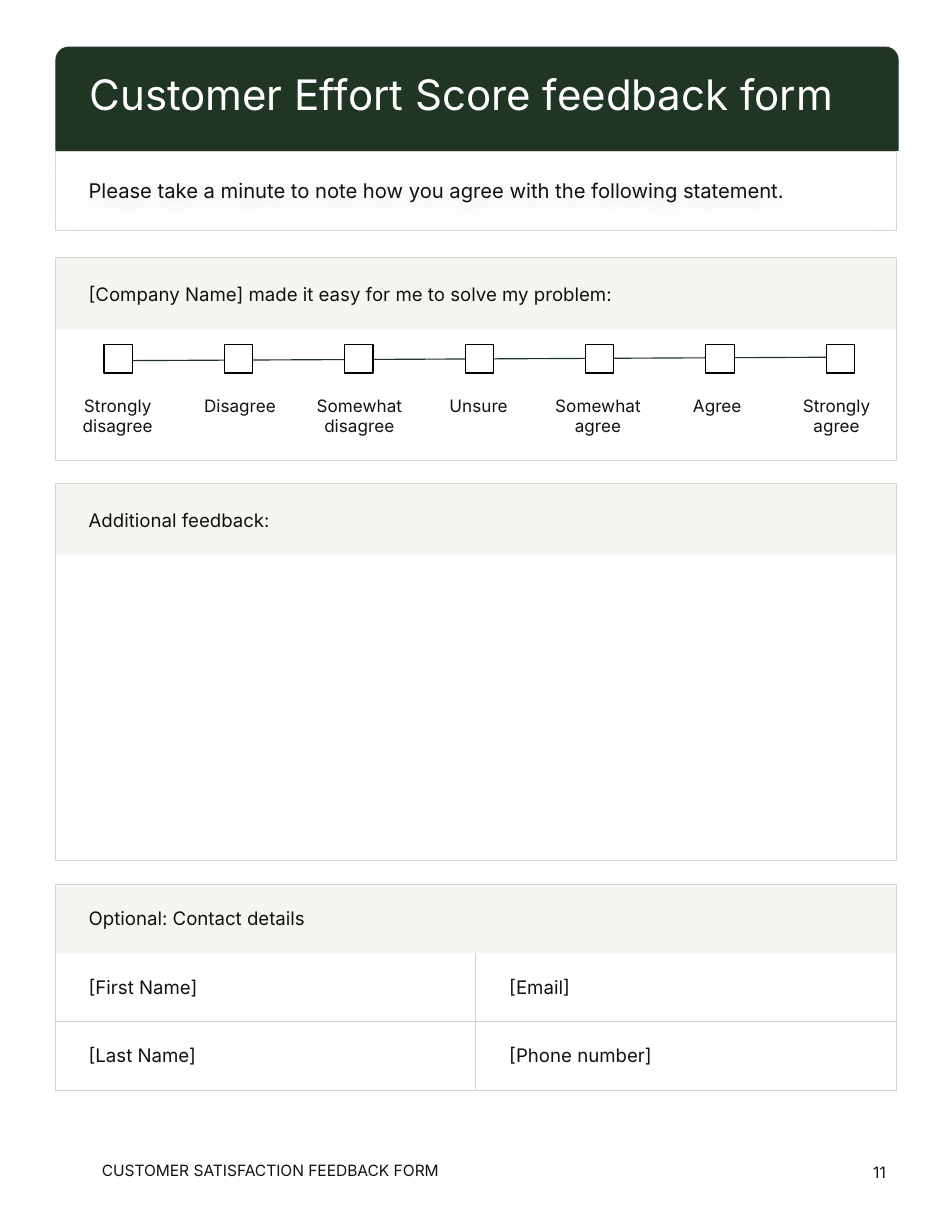
from lxml import etree
from pptx import Presentation
from pptx.dml.color import RGBColor
from pptx.enum import shapes, text
from pptx.oxml import ns
from pptx.util import Cm, Pt

TITLE = "Customer Effort Score feedback form"
INTRO = "Please take a minute to note how you agree with the following statement."
SCALE = ["Strongly disagree", "Disagree", "Somewhat disagree", "Unsure",
         "Somewhat agree", "Agree", "Strongly agree"]
CONTACTS = [["[First Name]", "[Email]"], ["[Last Name]", "[Phone number]"]]
FOOTER, PAGE = "CUSTOMER SATISFACTION FEEDBACK FORM", "11"

INK, GREEN, PALE, RULE, WHITE = "11110D", "203524", "F5F5F2", "D5D5D2", "FFFFFF"
FONT = "Inter"
LEFT, WIDTH = 1.25, 19.08
HEAD_INSETS = (0.76, 0.51, 0.51, 0.51)  # left, top, right, bottom
FIELD_INSETS = (0.76, 0.25, 0.51, 0.25)
SCALE_INSETS = (0.25, 1.52, 0.25, 0.51)
BOX, BOX_LEFT, BOX_TOP, BOX_STEP = 0.64, 2.36, 7.82, 2.73

# heading, top, row heights, column widths, body rows, insets, size, align, grid
SECTIONS = [
    ("[Company Name] made it easy for me to solve my problem:", 5.84, [1.6, 3],
     [2.84] + [(WIDTH - 2.84) / 6] * 6, [SCALE], SCALE_INSETS, 11,
     text.PP_ALIGN.CENTER, False),
    ("Additional feedback:", 10.97, [1.6, 6.93], [WIDTH], [[""]],
     FIELD_INSETS, 12, text.PP_ALIGN.LEFT, False),
    ("Optional: Contact details", 20.07, [1.55] * 3, [WIDTH / 2] * 2, CONTACTS,
     FIELD_INSETS, 12, text.PP_ALIGN.LEFT, True),
]


def color(value):
    return RGBColor.from_string(value)


def write(frame, words, size, ink=INK, align=text.PP_ALIGN.LEFT, spacing=None):
    frame.text = words
    paragraph = frame.paragraphs[0]
    paragraph.alignment = align
    if spacing:
        paragraph.line_spacing = spacing
    font = paragraph.font if not paragraph.runs else paragraph.runs[0].font
    font.name, font.size, font.bold = FONT, Pt(size), False
    font.color.rgb = color(ink)


def set_insets(holder, insets):
    (holder.margin_left, holder.margin_top,
     holder.margin_right, holder.margin_bottom) = map(Cm, insets)


def add_panel(slide, kind, place, line, fill=None):
    panel = slide.shapes.add_shape(kind, *map(Cm, place))
    panel.shadow.inherit = False
    panel.line.color.rgb = color(line)
    panel.line.width = Pt(0.75)
    if fill:
        panel.fill.solid()
        panel.fill.fore_color.rgb = color(fill)
    else:
        panel.fill.background()
    return panel


def add_label(slide, words, place, size, align, anchor):
    frame = slide.shapes.add_textbox(*map(Cm, place)).text_frame
    frame.word_wrap = True
    frame.vertical_anchor = anchor
    set_insets(frame, [0.25] * 4)
    write(frame, words, size, align=align)


def set_borders(cell, sides):
    """Rule the named sides (letters of LRTB) and clear the others."""
    properties = cell._tc.get_or_add_tcPr()
    for side in "LRTB":
        border = etree.SubElement(properties, ns.qn(f"a:ln{side}"), w=str(Pt(0.75)))
        if side in sides:
            fill = etree.SubElement(border, ns.qn("a:solidFill"))
            etree.SubElement(fill, ns.qn("a:srgbClr"), val=RULE)
        else:
            etree.SubElement(border, ns.qn("a:noFill"))


def add_section(slide, heading, top, heights, widths, body, insets, size, align, grid):
    rows, columns = len(heights), len(widths)
    table = slide.shapes.add_table(rows, columns, Cm(LEFT), Cm(top),
                                   Cm(WIDTH), Cm(sum(heights))).table
    table.first_row = table.horz_banding = False
    for row, height in zip(table.rows, heights):
        row.height = Cm(height)
    for column, width in zip(table.columns, widths):
        column.width = Cm(width)

    head = table.cell(0, 0)
    if columns > 1:
        head.merge(table.cell(0, columns - 1))
    set_borders(head, "LTR")
    head.fill.solid()
    head.fill.fore_color.rgb = color(PALE)
    head.vertical_anchor = text.MSO_ANCHOR.MIDDLE
    set_insets(head, HEAD_INSETS)
    write(head.text_frame, heading, 12, spacing=None if grid else 1.15)

    for r, answers in enumerate(body, 1):
        for c, words in enumerate(answers):
            cell = table.cell(r, c)
            sides = "L" * (grid or c == 0) + "R" * (grid or c == columns - 1)
            sides += "B" * (grid or r == rows - 1) + "T" * (grid and r > 1)
            set_borders(cell, sides)
            cell.fill.background()
            set_insets(cell, insets)
            if grid:
                cell.vertical_anchor = text.MSO_ANCHOR.MIDDLE
            write(cell.text_frame, words, size, align=align)


def add_title(slide):
    place = (1.27, 1.07, 19.1, 2.34)
    banner = add_panel(slide, shapes.MSO_SHAPE.ROUND_2_SAME_RECTANGLE, place, GREEN, GREEN)
    banner.adjustments[0] = 0.125
    title = slide.shapes.title
    title.element.addprevious(banner.element)
    title.left, title.top, title.width, title.height = map(Cm, place)
    frame = title.text_frame
    frame.word_wrap = True
    frame.auto_size = text.MSO_AUTO_SIZE.NONE
    frame.vertical_anchor = text.MSO_ANCHOR.MIDDLE
    set_insets(frame, FIELD_INSETS)
    write(frame, TITLE, 27, WHITE, spacing=0.8)


def add_intro(slide):
    intro = add_panel(slide, shapes.MSO_SHAPE.RECTANGLE, (LEFT, 3.43, WIDTH, 1.8), RULE)
    effects = intro.element.spPr.find(ns.qn("a:effectLst"))
    shadow = etree.SubElement(effects, ns.qn("a:outerShdw"), blurRad=str(Pt(13.5)),
                              dist=str(Pt(2.1)), dir="5400000", rotWithShape="0")
    tint = etree.SubElement(shadow, ns.qn("a:srgbClr"), val="16140C")
    etree.SubElement(tint, ns.qn("a:alpha"), val="14000")
    frame = intro.text_frame
    frame.word_wrap = True
    frame.vertical_anchor = text.MSO_ANCHOR.MIDDLE
    set_insets(frame, (0.76, 0, 0, 0))
    write(frame, INTRO, 13)


def add_checkboxes(slide):
    track = slide.shapes.add_connector(shapes.MSO_CONNECTOR.STRAIGHT,
                                       Cm(2.54), Cm(8.18), Cm(19.05), Cm(8.1))
    track.line.color.rgb = color(GREEN)
    track.line.width = Pt(0.75)
    etree.SubElement(track.element.spPr, ns.qn("a:effectLst"))
    for i in range(len(SCALE)):
        place = (BOX_LEFT + i * BOX_STEP, BOX_TOP, BOX, BOX)
        add_panel(slide, shapes.MSO_SHAPE.RECTANGLE, place, "000000", WHITE)


def main():
    deck = Presentation()
    deck.slide_width, deck.slide_height = Cm(21.59), Cm(27.94)
    slide = deck.slides.add_slide(deck.slide_layouts.get_by_name("Title Only"))
    add_title(slide)
    add_intro(slide)
    for section in SECTIONS:
        add_section(slide, *section)
    add_checkboxes(slide)
    add_label(slide, FOOTER, (2.06, 26.11, 8.33, 0.94), 10,
              text.PP_ALIGN.LEFT, text.MSO_ANCHOR.TOP)
    add_label(slide, PAGE, (19.3, 25.68, 1.04, 1.8), 10,
              text.PP_ALIGN.RIGHT, text.MSO_ANCHOR.MIDDLE)
    deck.save("out.pptx")


if __name__ == "__main__":
    main()
